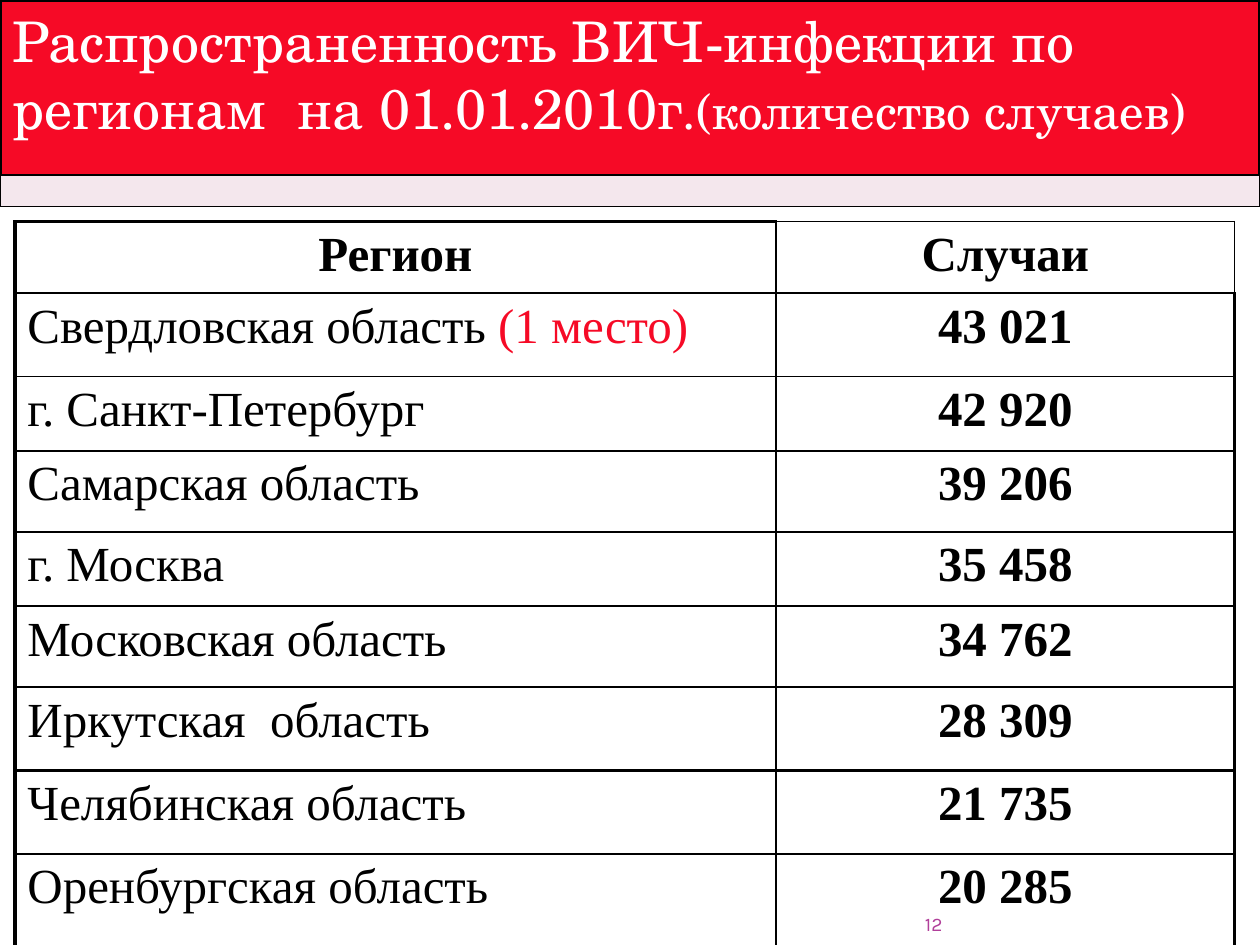
from dataclasses import dataclass

from lxml.etree import SubElement
from pptx import Presentation
from pptx.dml.color import RGBColor
from pptx.enum.shapes import MSO_SHAPE
from pptx.enum.text import MSO_ANCHOR, PP_ALIGN
from pptx.oxml.ns import qn
from pptx.util import Cm, Pt


@dataclass(frozen=True)
class Theme:
    red: str = "F60A26"
    pink: str = "F4E7ED"
    purple: str = "B13F9A"
    black: str = "000000"
    white: str = "FFFFFF"
    title_font: str = "TeX Gyre Schola"
    table_font: str = "Times New Roman"
    number_font: str = "Karla"
    title_size: int = 32
    body_size: int = 28
    number_size: int = 11
    thin: float = 1
    heavy: float = 2.25


REGIONS = [
    ("Свердловская область ", "43 021"),
    ("г. Санкт-Петербург", "42 920"),
    ("Самарская область", "39 206"),
    ("г. Москва", "35 458"),
    ("Московская область", "34 762"),
    ("Иркутская  область", "28 309"),
    ("Челябинская область", "21 735"),
    ("Оренбургская область", "20 285"),
]
COLUMN_WIDTHS = [15.34, 9.25]
ROW_HEIGHTS = [1.42, 1.68, 1.5, 1.63, 1.5, 1.63, 1.68, 1.68, 1.88]
HEAVY_RULE_BELOW = 6  # row index of the last region above the thick divider


class SlideBuilder:
    def __init__(self, slide, theme):
        self.slide = slide
        self.theme = theme

    def style(self, paragraph, font, size, color, bold=False, align=PP_ALIGN.LEFT):
        paragraph.alignment = align
        paragraph.font.name = font
        paragraph.font.size = Pt(size)
        paragraph.font.bold = bold
        paragraph.font.color.rgb = RGBColor.from_string(color)

    def band(self, top, height, fill, line_width):
        """Draw an outlined strip across the whole slide."""
        strip = self.slide.shapes.add_shape(
            MSO_SHAPE.RECTANGLE, 0, Cm(top), Cm(25.4), Cm(height))
        strip.shadow.inherit = False
        strip.fill.solid()
        strip.fill.fore_color.rgb = RGBColor.from_string(fill)
        strip.line.color.rgb = RGBColor.from_string(self.theme.black)
        strip.line.width = Pt(line_width)

    def text_frame(self, left, top, width, height):
        frame = self.slide.shapes.add_textbox(
            Cm(left), Cm(top), Cm(width), Cm(height)).text_frame
        frame.word_wrap = True
        return frame

    def title(self, main, detail):
        paragraph = self.text_frame(0, 0, 25.4, 2.97).paragraphs[0]
        self.style(paragraph, self.theme.title_font, self.theme.title_size,
                   self.theme.white)
        paragraph.add_run().text = main
        detail_run = paragraph.add_run()
        detail_run.text = detail
        detail_run.font.size = Pt(self.theme.body_size)

    def slide_number(self, number):
        frame = self.text_frame(17.37, 18.21, 1.63, 0.64)
        frame.margin_left = frame.margin_right = 0
        frame.margin_top = frame.margin_bottom = 0
        frame.vertical_anchor = MSO_ANCHOR.BOTTOM
        paragraph = frame.paragraphs[0]
        self.style(paragraph, self.theme.number_font, self.theme.number_size,
                   self.theme.purple, align=PP_ALIGN.RIGHT)
        paragraph.add_run().text = number

    def cell_borders(self, cell, heavy_sides):
        properties = cell._tc.get_or_add_tcPr()
        for side in "LRTB":
            width = self.theme.heavy if side in heavy_sides else self.theme.thin
            line = SubElement(properties, qn(f"a:ln{side}"), w=str(Pt(width)))
            fill = SubElement(line, qn("a:solidFill"))
            SubElement(fill, qn("a:srgbClr"), val=self.theme.black)

    def table(self, left, top, rows, widths, heights):
        table = self.slide.shapes.add_table(
            len(rows), len(widths), Cm(left), Cm(top),
            Cm(sum(widths)), Cm(sum(heights))).table
        table.first_row = table.horz_banding = False
        for column, width in zip(table.columns, widths):
            column.width = Cm(width)
        for r, (texts, height) in enumerate(zip(rows, heights)):
            table.rows[r].height = Cm(height)
            for c, text in enumerate(texts):
                cell = table.cell(r, c)
                self.cell_borders(cell, heavy_sides(r, c, len(rows) - 1))
                cell.fill.background()
                paragraph = cell.text_frame.paragraphs[0]
                emphasized = r == 0 or c == 1
                self.style(paragraph, self.theme.table_font, self.theme.body_size,
                           self.theme.black, emphasized,
                           PP_ALIGN.CENTER if emphasized else PP_ALIGN.LEFT)
                paragraph.add_run().text = text
        return table

    def highlight(self, cell, text):
        """Append red text to a cell."""
        run = cell.text_frame.paragraphs[0].add_run()
        run.text = text
        run.font.color.rgb = RGBColor.from_string(self.theme.red)


def heavy_sides(row, column, last_row):
    """Name the sides of a cell that carry the thick rule."""
    rules = {
        "L": column == 0,
        "R": column == 1 and row > 0,
        "T": (row, column) == (0, 0) or row == HEAVY_RULE_BELOW + 1,
        "B": row in (HEAVY_RULE_BELOW, last_row),
    }
    return [side for side, heavy in rules.items() if heavy]


def main():
    presentation = Presentation()
    presentation.slide_width, presentation.slide_height = Cm(25.4), Cm(19.05)
    theme = Theme()
    builder = SlideBuilder(
        presentation.slides.add_slide(presentation.slide_layouts[6]), theme)

    builder.slide_number("12")
    builder.band(0, 3.73, theme.red, 2.25)
    builder.title("Распространенность ВИЧ-инфекции по регионам  на 01.01.2010г",
                  ".(количество случаев)")
    builder.band(3.53, 0.64, theme.pink, 0.75)
    cases = builder.table(0.3, 4.47, [("Регион", "Случаи"), *REGIONS],
                          COLUMN_WIDTHS, ROW_HEIGHTS)
    builder.highlight(cases.cell(1, 0), "(1 место)")

    presentation.save("out.pptx")


if __name__ == "__main__":
    main()
